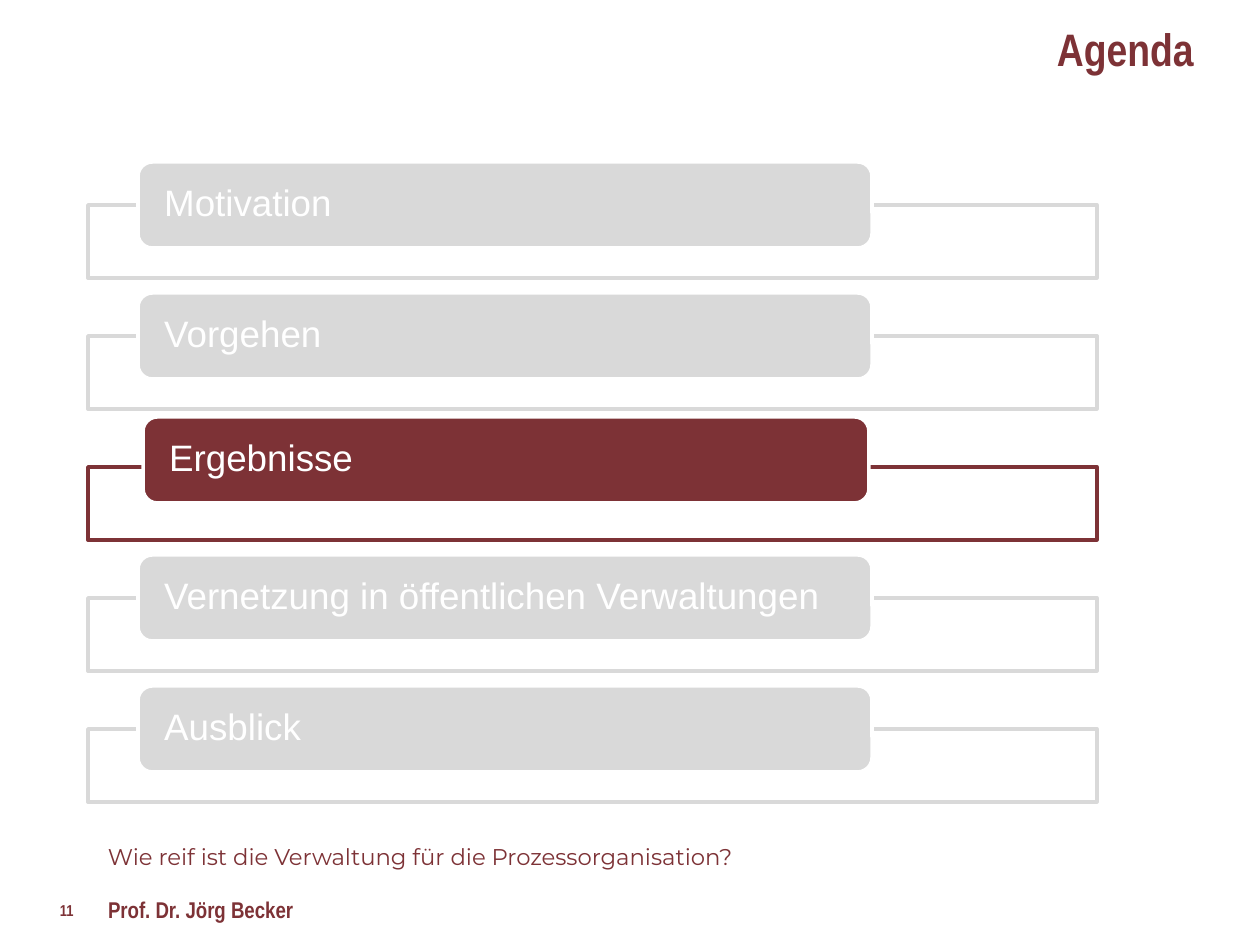
"""Build the agenda slide with the results chapter highlighted."""
from dataclasses import dataclass

from lxml.etree import SubElement
from pptx import Presentation
from pptx.dml.color import RGBColor
from pptx.enum.shapes import MSO_AUTO_SHAPE_TYPE as ShapeType
from pptx.enum.text import MSO_ANCHOR as Anchor, PP_ALIGN as Align
from pptx.oxml.ns import qn
from pptx.shapes.autoshape import Shape
from pptx.slide import Slide
from pptx.util import Emu, Pt


@dataclass(frozen=True)
class Theme:
    accent: str = "7D3236"
    muted: str = "D9D9D9"
    white: str = "FFFFFF"
    title_size: int = 26
    chapter_size: int = 21
    footer_size: int = 13
    number_size: int = 9
    line_width: int = 2
    frame_alpha: int = 90000


@dataclass(frozen=True)
class Area:
    left: int
    top: int
    width: int
    height: int


@dataclass(frozen=True)
class Label:
    text: str
    area: Area
    insets: tuple[int, int, int, int]
    size: int
    font: str = "Arial Narrow"
    bold: bool = True
    color: str = Theme.accent
    align: Align = Align.LEFT
    anchor: Anchor = Anchor.TOP
    wrap: bool = True
    line_spacing: float = 1.0


@dataclass(frozen=True)
class Chapter:
    text: str
    active: bool = False


THEME = Theme()
PX_PER_INCH = 126
ROW_PITCH = 131
FOOTER_INSETS = (16, 9, 16, 9)
TITLE = Label("Agenda", Area(1046, 21, 152, 56), (0, 0, 4, 0),
              THEME.title_size, align=Align.RIGHT, wrap=False)
FOOTERS = (
    Label("11", Area(39, 893, 64, 35), (21, 9, 16, 9),
          THEME.number_size, anchor=Anchor.MIDDLE),
    Label("Wie reif ist die Verwaltung für die Prozessorganisation?",
          Area(92, 834, 935, 44), FOOTER_INSETS, THEME.footer_size,
          font="Montserrat", bold=False),
    Label("Prof. Dr. Jörg Becker", Area(92, 887, 572, 44),
          FOOTER_INSETS, THEME.footer_size),
)
CHAPTERS = (
    Chapter("Motivation"),
    Chapter("Vorgehen"),
    Chapter("Ergebnisse", active=True),
    Chapter("Vernetzung in öffentlichen Verwaltungen"),
    Chapter("Ausblick"),
)


def px(length: int) -> Emu:
    """Turn pixels into EMU."""
    return Emu(round(length * 914400 / PX_PER_INCH))


def place(area: Area) -> tuple[Emu, ...]:
    """Return the position and size of an area in EMU."""
    return tuple(px(n) for n in (area.left, area.top, area.width, area.height))


def apply(target: object, values: dict[str, object]) -> None:
    """Set each named attribute on the target."""
    for name, value in values.items():
        setattr(target, name, value)


def paint(box: Shape, color: str) -> None:
    """Fill a shape with one colour."""
    box.fill.solid()
    box.fill.fore_color.rgb = RGBColor.from_string(color)


def write(box: Shape, label: Label) -> None:
    """Write a label into a shape."""
    left, top, right, bottom = (px(inset) for inset in label.insets)
    frame = box.text_frame
    apply(frame, {"margin_left": left, "margin_top": top,
                  "margin_right": right, "margin_bottom": bottom,
                  "word_wrap": label.wrap, "vertical_anchor": label.anchor})
    para = frame.paragraphs[0]
    apply(para, {"alignment": label.align, "line_spacing": label.line_spacing})
    span = para.add_run()
    span.text = label.text
    apply(span.font, {"name": label.font, "size": Pt(label.size), "bold": label.bold})
    span.font.color.rgb = RGBColor.from_string(label.color)


def add_label(page: Slide, label: Label) -> Shape:
    """Add a text box holding a label."""
    box = page.shapes.add_textbox(*place(label.area))
    write(box, label)
    return box


def add_panel(page: Slide, kind: ShapeType, area: Area, fill: str, line: str) -> Shape:
    """Add a flat outlined shape."""
    box = page.shapes.add_shape(kind, *place(area))
    box.shadow.inherit = False
    paint(box, fill)
    box.line.color.rgb = RGBColor.from_string(line)
    box.line.width = Pt(THEME.line_width)
    return box


def add_chapter(page: Slide, chapter: Chapter, row: int) -> None:
    """Add the frame and the tab of one chapter."""
    color = THEME.accent if chapter.active else THEME.muted
    offset = row * ROW_PITCH
    frame = add_panel(page, ShapeType.RECTANGLE, Area(88, 205 + offset, 1009, 73),
                      THEME.white, color)
    tint = frame.fill._xPr.find(qn("a:solidFill"))[0]
    SubElement(tint, qn("a:alpha")).set("val", str(THEME.frame_alpha))
    area = (Area(143, 155 + offset, 726, 86) if chapter.active
            else Area(138, 162 + offset, 734, 86))
    tab = add_panel(page, ShapeType.ROUNDED_RECTANGLE, area, color, THEME.white)
    write(tab, Label(chapter.text, area, (22, 0, 22, 0), THEME.chapter_size,
                     font="Arial", bold=False, color=THEME.white,
                     anchor=Anchor.MIDDLE, line_spacing=0.9))


def main() -> None:
    """Build and save the deck."""
    deck = Presentation()
    apply(deck, {"slide_width": px(1260), "slide_height": px(945)})
    page = deck.slides.add_slide(deck.slide_layouts[6])
    for footer in FOOTERS:
        add_label(page, footer)
    paint(add_label(page, TITLE), THEME.white)
    for row, chapter in enumerate(CHAPTERS):
        add_chapter(page, chapter, row)
    deck.save("out.pptx")


if __name__ == "__main__":
    main()
